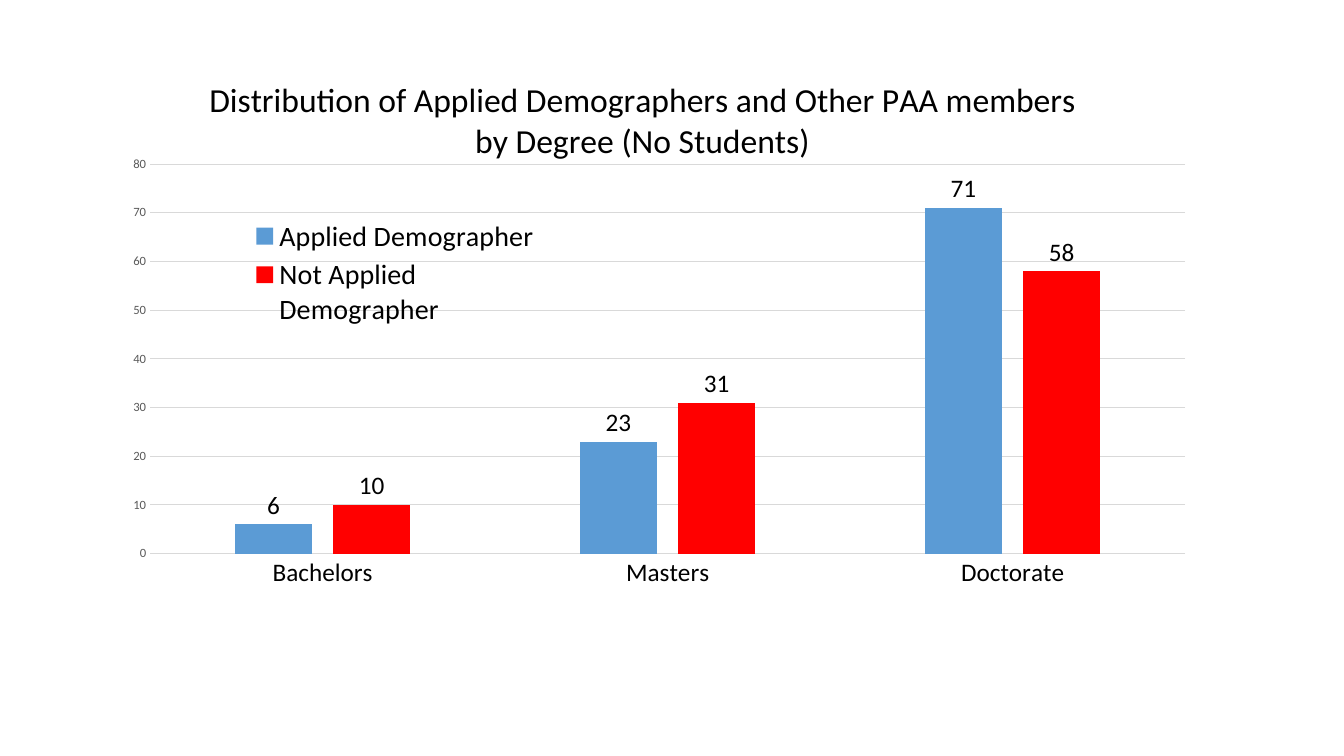
from dataclasses import dataclass

from lxml import etree
from pptx import Presentation
from pptx import util as u
from pptx.chart.data import CategoryChartData
from pptx.dml.color import RGBColor
from pptx.enum import chart as ch
from pptx.oxml.ns import qn


@dataclass(frozen=True)
class Theme:
    font: str = "Calibri"
    ink: str = "000000"
    muted: str = "595959"
    rule: str = "D9D9D9"
    applied: str = "5B9BD5"
    other: str = "FF0000"
    title_size: int = 24
    legend_size: int = 20
    label_size: int = 18
    scale_size: int = 9
    line_width: float = 0.75


THEME = Theme()
DEGREES = ("Bachelors", "Masters", "Doctorate")
MEMBERS = (
    ("Applied Demographer", (6, 23, 71), THEME.applied),
    ("Not Applied Demographer", (10, 31, 58), THEME.other),
)
TITLE = "Distribution of Applied Demographers and Other PAA members by Degree (No Students)"


def style_font(font, size, color=THEME.ink):
    font.name = THEME.font
    font.size = u.Pt(size)
    font.bold = False
    font.color.rgb = RGBColor.from_string(color)


def style_line(line):
    line.color.rgb = RGBColor.from_string(THEME.rule)
    line.width = u.Pt(THEME.line_width)


def set_layout(element, after=None, inner=False, **shares):
    """Place a chart part by shares (x, y, w, h) of the chart's size."""
    for old in element.findall(qn("c:layout")):
        element.remove(old)
    layout = etree.Element(qn("c:layout"))
    manual = etree.SubElement(layout, qn("c:manualLayout"))
    settings = {"layoutTarget": "inner"} if inner else {}
    settings.update(xMode="edge", yMode="edge", **shares)
    for tag, value in settings.items():
        etree.SubElement(manual, qn(f"c:{tag}")).set("val", str(value))
    position = 0 if after is None else element.index(element.find(qn(after))) + 1
    element.insert(position, layout)


def style_axes(chart):
    degrees, percent = chart.category_axis, chart.value_axis
    for axis in (degrees, percent):
        axis.major_tick_mark = axis.minor_tick_mark = ch.XL_TICK_MARK.NONE
    style_font(degrees.tick_labels.font, THEME.label_size)
    style_line(degrees.format.line)
    style_font(percent.tick_labels.font, THEME.scale_size, THEME.muted)
    percent.tick_labels.number_format = "0"
    percent.tick_labels.number_format_is_linked = False
    percent.minimum_scale, percent.maximum_scale, percent.major_unit = 0, 80, 10
    percent.format.line.fill.background()
    style_line(percent.major_gridlines.format.line)


def style_columns(plot):
    plot.gap_width, plot.overlap = 219, -27
    plot.vary_by_categories = False
    for series, (_, _, color) in zip(plot.series, MEMBERS):
        series.format.fill.solid()
        series.format.fill.fore_color.rgb = RGBColor.from_string(color)
        labels = series.data_labels
        labels.show_value = True
        labels.position = ch.XL_LABEL_POSITION.OUTSIDE_END
        labels.number_format = "0"
        labels.number_format_is_linked = False
        style_font(labels.font, THEME.label_size)


def add_title(chart):
    chart.has_title = True
    title = chart.chart_title
    title.include_in_layout = False
    title.text_frame.text = TITLE
    style_font(title.text_frame.paragraphs[0].font, THEME.title_size)
    set_layout(title.text_frame._txBody.getparent().getparent(), "c:tx", x=0.13, y=0.06)


def add_legend(chart):
    chart.has_legend = True
    legend = chart.legend
    legend.position = ch.XL_LEGEND_POSITION.RIGHT
    legend.include_in_layout = False
    style_font(legend.font, THEME.legend_size)
    set_layout(legend._element, "c:legendPos", x=0.17, y=0.27, w=0.26, h=0.17)


def add_degree_chart(slide, left, top, width, height):
    data = CategoryChartData(number_format="0")
    data.categories = DEGREES
    for name, values, _ in MEMBERS:
        data.add_series(name, values)
    chart = slide.shapes.add_chart(
        ch.XL_CHART_TYPE.COLUMN_CLUSTERED, left, top, width, height, data
    ).chart
    style_font(chart.font, 10)
    style_axes(chart)
    style_columns(chart.plots[0])
    add_title(chart)
    add_legend(chart)
    plot_area = chart._chartSpace.chart.plotArea
    set_layout(plot_area, inner=True, x=0.083, y=0.196, w=0.917, h=0.57)


def main():
    deck = Presentation()
    deck.slide_width, deck.slide_height = u.Inches(13.33), u.Inches(7.5)
    slide = deck.slides.add_slide(deck.slide_layouts[6])
    add_degree_chart(slide, u.Inches(0.56), u.Inches(0.3), u.Inches(11.2), u.Inches(6.78))
    deck.save("out.pptx")


if __name__ == "__main__":
    main()
